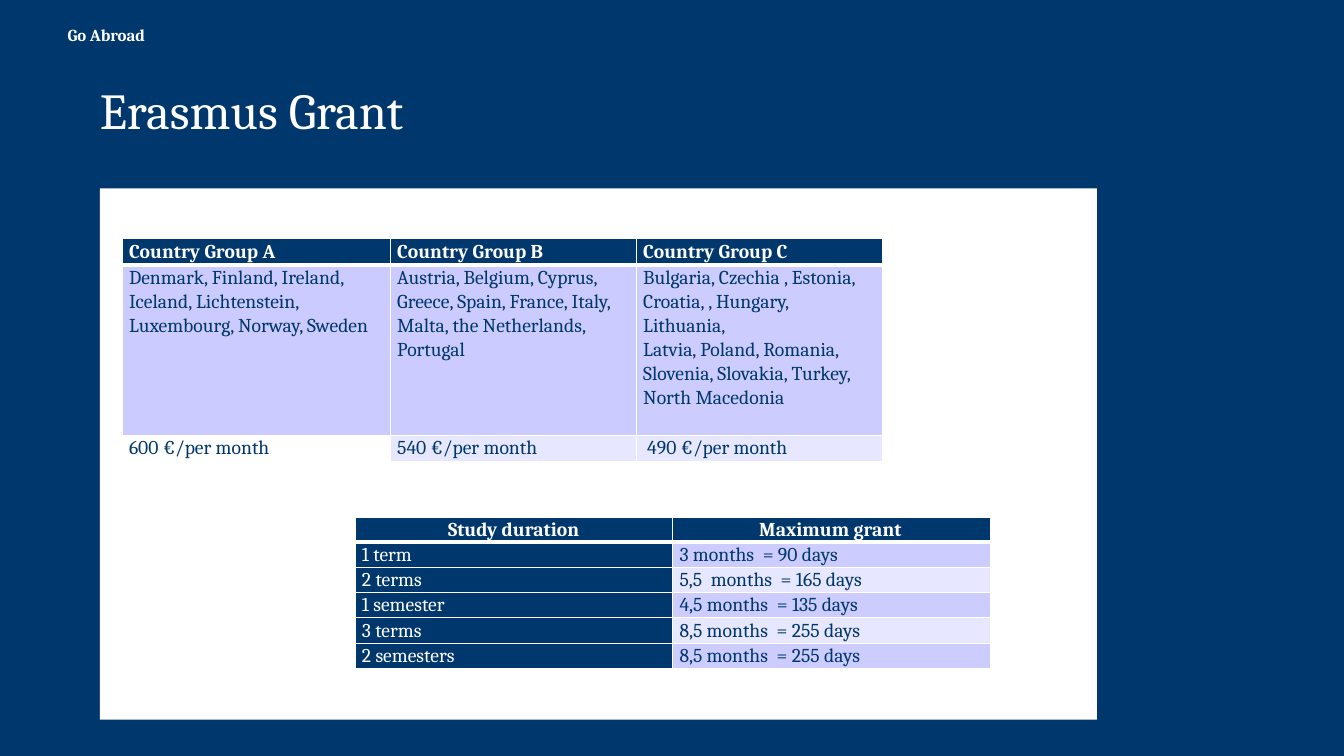
from lxml import etree
from pptx import Presentation
from pptx.dml.color import RGBColor
from pptx.enum.shapes import MSO_SHAPE
from pptx.enum.text import MSO_ANCHOR, PP_ALIGN
from pptx.oxml.ns import qn
from pptx.util import Inches, Pt

RECTANGLE = MSO_SHAPE.RECTANGLE
MIDDLE = MSO_ANCHOR.MIDDLE
LEFT, CENTER, JUSTIFY = PP_ALIGN.LEFT, PP_ALIGN.CENTER, PP_ALIGN.JUSTIFY
NAVY = RGBColor(0x00, 0x37, 0x6C)
WHITE = RGBColor(0xFF, 0xFF, 0xFF)
LILAC = RGBColor(0xCB, 0xCB, 0xFF)
LAVENDER = RGBColor(0xCC, 0xCC, 0xFF)
PALE = RGBColor(0xE7, 0xE7, 0xFF)
FONT = "Cambria"
CELL_MARGIN = 0.07

COUNTRIES = [
    ["Country Group A", "Country Group B", "Country Group C"],
    ["Denmark, Finland, Ireland, Iceland, Lichtenstein, Luxembourg, Norway, Sweden",
     "Austria, Belgium, Cyprus, Greece, Spain, France, Italy, Malta, the Netherlands, Portugal",
     "Bulgaria, Czechia , Estonia, Croatia, , Hungary, Lithuania,\n"
     "Latvia, Poland, Romania, Slovenia, Slovakia, Turkey, North Macedonia"],
    ["600 €/per month", "540 €/per month", "490 €/per month"],
]
DURATIONS = [
    ["Study duration", "Maximum grant"],
    ["1 term", "3 months  = 90 days"],
    ["2 terms", "5,5  months  = 165 days"],
    ["1 semester", "4,5 months  = 135 days"],
    ["3 terms", "8,5 months  = 255 days"],
    ["2 semesters", "8,5 months  = 255 days"],
]


def add_run(p, text, size, color, bold=False):
    r = p.add_run()
    r.text = text
    r.font.name = FONT
    r.font.size = Pt(size)
    r.font.bold = bold
    r.font.color.rgb = color


def add_text(s, box, text, size, bold=False, inset=0, anchor=None, spacing=None):
    tf = s.shapes.add_textbox(*map(Inches, box)).text_frame
    tf.word_wrap = True
    tf.margin_left = Inches(inset)
    tf.margin_top = tf.margin_right = tf.margin_bottom = 0
    tf.vertical_anchor = anchor
    p = tf.paragraphs[0]
    p.line_spacing = spacing
    add_run(p, text, size, WHITE, bold)


def add_panel(s, box):
    sp = s.shapes.add_shape(RECTANGLE, *map(Inches, box))
    sp.shadow.inherit = False
    sp.fill.solid()
    sp.fill.fore_color.rgb = WHITE
    sp.line.fill.background()


def set_borders(cell, row):
    widths = {"L": 1, "R": 1, "T": 3 if row == 1 else 1, "B": 3 if row == 0 else 1}
    tcPr = cell._tc.get_or_add_tcPr()
    for side, width in widths.items():
        ln = etree.SubElement(tcPr, qn(f"a:ln{side}"), w=str(Pt(width)))
        fill = etree.SubElement(ln, qn("a:solidFill"))
        etree.SubElement(fill, qn("a:srgbClr"), val=str(WHITE))


def fill_cell(cell, row, text, fill, align, indent):
    set_borders(cell, row)
    if fill is None:
        cell.fill.background()
    else:
        cell.fill.solid()
        cell.fill.fore_color.rgb = fill
    cell.margin_left = Inches(CELL_MARGIN + indent)
    cell.margin_right = Inches(CELL_MARGIN)
    cell.margin_top = cell.margin_bottom = 0
    tf = cell.text_frame
    for i, line in enumerate(text.split("\n")):
        p = tf.paragraphs[0] if i == 0 else tf.add_paragraph()
        p.alignment = align
        p.line_spacing = 1.07
        add_run(p, line, 14, WHITE if fill == NAVY else NAVY, row == 0)


def add_grid(s, left, top, widths, heights, rows, style):
    shape = s.shapes.add_table(len(rows), len(widths), Inches(left), Inches(top),
                               Inches(sum(widths)), Inches(sum(heights)))
    table = shape.table
    table.horz_banding = False
    for column, width in zip(table.columns, widths):
        column.width = Inches(width)
    for i, (texts, height) in enumerate(zip(rows, heights)):
        table.rows[i].height = Inches(height)
        for j, text in enumerate(texts):
            fill_cell(table.cell(i, j), i, text, *style(i, j))


def country_style(row, col):
    fills = [[NAVY] * 3, [LILAC, LILAC, LAVENDER], [None, PALE, PALE]]
    return fills[row][col], LEFT, 0.04 if (row, col) == (2, 2) else 0


def duration_style(row, col):
    if row == 0:
        return (NAVY, CENTER, 0) if col == 0 else (NAVY, LEFT, 0.79)
    band = LAVENDER if row % 2 else PALE
    return NAVY if col == 0 else band, JUSTIFY, 0


def add_grants(s, left, top, width, height):
    add_panel(s, (left, top, width, height))
    add_grid(s, left + 0.22, top + 0.5, [2.66, 2.44, 2.44], [0.26, 1.69, 0.26],
             COUNTRIES, country_style)
    add_grid(s, left + 2.53, top + 3.26, [3.15] * 2, [0.23] * len(DURATIONS),
             DURATIONS, duration_style)


def main():
    prs = Presentation()
    prs.slide_width, prs.slide_height = Inches(13.33), Inches(7.5)
    s = prs.slides.add_slide(prs.slide_layouts[6])
    s.background.fill.solid()
    s.background.fill.fore_color.rgb = NAVY
    add_text(s, (0, 0, 12.1, 0.69), "Go Abroad", 12, bold=True, inset=0.67, anchor=MIDDLE)
    add_grants(s, 0.99, 1.87, 9.89, 5.27)
    add_text(s, (0.99, 1.09, 5.6, 0.47), "Erasmus Grant", 36, spacing=Pt(21))
    prs.save("out.pptx")


if __name__ == "__main__":
    main()
